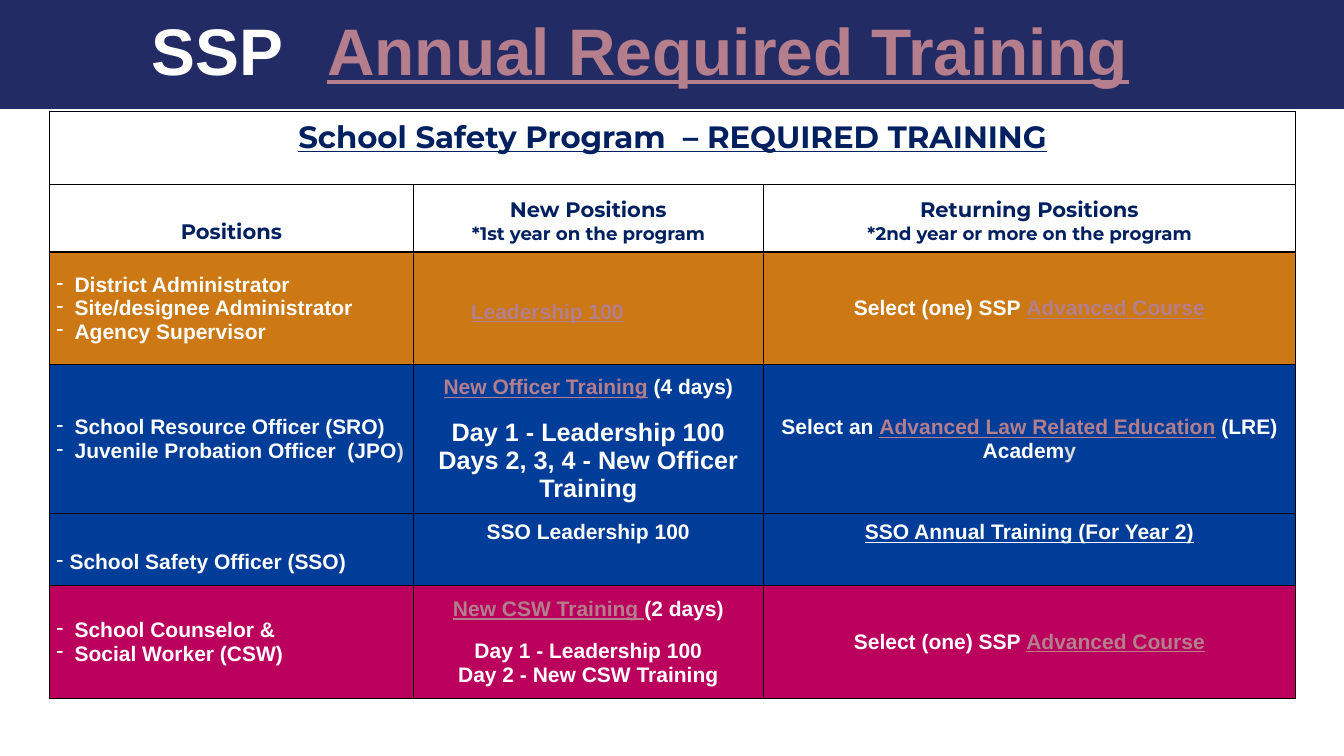
from dataclasses import dataclass

from lxml import etree
from pptx import Presentation
from pptx.dml.color import RGBColor
from pptx.enum import shapes, text
from pptx.oxml import ns
from pptx.util import Inches, Pt

WHITE = RGBColor(0xFF, 0xFF, 0xFF)
BANNER_NAVY = RGBColor(0x23, 0x2B, 0x64)
HEADING_NAVY = RGBColor(0x00, 0x20, 0x60)
LINK_ROSE = RGBColor(0xB4, 0x7E, 0x8C)
PALE_GREY = RGBColor(0xD9, 0xD9, 0xD9)
ORANGE = RGBColor(0xCB, 0x78, 0x15)
BLUE = RGBColor(0x00, 0x3D, 0x98)
MAGENTA = RGBColor(0xBA, 0x00, 0x5C)
BORDER_HEX = "000000"

LEFT, CENTER = text.PP_ALIGN.LEFT, text.PP_ALIGN.CENTER
TOP, MIDDLE, BOTTOM = text.MSO_ANCHOR.TOP, text.MSO_ANCHOR.MIDDLE, text.MSO_ANCHOR.BOTTOM
COLUMN_WIDTHS = (3.61, 3.47, 5.28)
TABLE_LEFT = 0.49
CELL_MARGIN = 0.07


@dataclass
class Run:
    words: str
    size: float = 15
    color: RGBColor = WHITE
    underline: bool = False
    font: str = "Arial"


@dataclass
class Line:
    runs: list
    align: int = CENTER
    before: float = 0
    hanging: float = 0


@dataclass
class Cell:
    lines: list
    anchor: int = MIDDLE
    left: float = CELL_MARGIN
    top: float = CELL_MARGIN


def link(words):
    return Run(words, color=LINK_ROSE, underline=True)


def heading(words, size=15, underline=False):
    return Line([Run(words, size, HEADING_NAVY, underline, "Montserrat")])


def dashed(*runs, hanging=0.18):
    return Line(list(runs), LEFT, hanging=hanging)


def add_run(paragraph, item):
    run = paragraph.add_run()
    run.text = item.words
    run.font.size = Pt(item.size)
    run.font.name = item.font
    run.font.bold = True
    run.font.underline = item.underline
    run.font.color.rgb = item.color


def add_dash(paragraph, hanging):
    properties = paragraph._p.get_or_add_pPr()
    properties.set("marL", str(Inches(hanging)))
    properties.set("indent", str(-Inches(hanging)))
    etree.SubElement(properties, ns.qn("a:buChar"), char="-")


def fill_lines(frame, lines):
    for index, line in enumerate(lines):
        paragraph = frame.add_paragraph() if index else frame.paragraphs[0]
        paragraph.alignment = line.align
        if line.before:
            paragraph.space_before = Pt(line.before)
        if line.hanging:
            add_dash(paragraph, line.hanging)
        for item in line.runs:
            add_run(paragraph, item)


def add_borders(cell):
    properties = cell._tc.get_or_add_tcPr()
    for side in ("lnL", "lnR", "lnT", "lnB"):
        border = etree.SubElement(properties, ns.qn(f"a:{side}"), w=str(Pt(1)))
        solid = etree.SubElement(border, ns.qn("a:solidFill"))
        etree.SubElement(solid, ns.qn("a:srgbClr"), val=BORDER_HEX)


def add_training_table(slide, top, row_heights, rows, color=None):
    table = slide.shapes.add_table(
        len(rows), len(COLUMN_WIDTHS), Inches(TABLE_LEFT), Inches(top),
        Inches(sum(COLUMN_WIDTHS)), Inches(sum(row_heights))).table
    table.first_row = table.horz_banding = False
    for column, width in zip(table.columns, COLUMN_WIDTHS):
        column.width = Inches(width)
    for row_index, (row, height) in enumerate(zip(rows, row_heights)):
        table.rows[row_index].height = Inches(height)
        for column_index in range(len(COLUMN_WIDTHS)):
            cell = table.cell(row_index, column_index)
            add_borders(cell)
            if color is None:
                cell.fill.background()
            else:
                cell.fill.solid()
                cell.fill.fore_color.rgb = color
        for column_index, content in enumerate(row):
            cell = table.cell(row_index, column_index)
            cell.margin_left, cell.margin_top = Inches(content.left), Inches(content.top)
            cell.margin_right = cell.margin_bottom = Inches(CELL_MARGIN)
            cell.vertical_anchor = content.anchor
            fill_lines(cell.text_frame, content.lines)
        if len(row) == 1:
            table.cell(row_index, 0).merge(table.cell(row_index, len(COLUMN_WIDTHS) - 1))


def add_title_text(slide, box, item, anchor, inset):
    frame = slide.shapes.add_textbox(*map(Inches, box)).text_frame
    frame.word_wrap = True
    frame.vertical_anchor = anchor
    frame.margin_top = frame.margin_bottom = Inches(inset)
    fill_lines(frame, [Line([item])])
    frame.paragraphs[0].line_spacing = 0.9


def add_banner(slide, width, height):
    banner = slide.shapes.add_shape(
        shapes.MSO_SHAPE.RECTANGLE, 0, 0, Inches(width), Inches(height))
    banner.shadow.inherit = False
    banner.fill.solid()
    banner.fill.fore_color.rgb = BANNER_NAVY
    banner.line.fill.background()
    add_title_text(slide, (0, 0.05, 4.48, height - 0.1), Run("SSP ", 47), MIDDLE, 0.05)
    add_title_text(slide, (2.98, 0.08, 8.48, 0.91),
                   Run("Annual Required Training", 47, LINK_ROSE, True), TOP, 0.1)


def add_training_tables(slide):
    advanced = Cell([Line([Run("Select (one) SSP "), link("Advanced Course")])])
    add_training_table(slide, 1.11, (0.72, 0.67), [
        [Cell([heading("School Safety Program  – REQUIRED TRAINING", 22, True)], TOP)],
        [Cell([heading("Positions")], BOTTOM),
         Cell([heading("New Positions"), heading("*1st year on the program", 13)], BOTTOM),
         Cell([heading("Returning Positions"),
               heading("*2nd year or more on the program", 13)], BOTTOM)],
    ])
    add_training_table(slide, 2.5, (1.12,), [
        [Cell([dashed(Run(position)) for position in (
            "District Administrator", "Site/designee Administrator", "Agency Supervisor")]),
         Cell([Line([link("Leadership 100")], LEFT)], left=0.57, top=0.14),
         advanced],
    ], ORANGE)
    add_training_table(slide, 3.62, (1.39, 0.8), [
        [Cell([dashed(Run("School Resource Officer (SRO)")),
               dashed(Run("Juvenile Probation Officer  (JPO"), Run(")", color=PALE_GREY))]),
         Cell([Line([link("New Officer Training"), Run(" (4 days)")]),
               Line([Run("Day 1 - Leadership 100", 18)], before=13.5),
               Line([Run("Days 2, 3, 4 - New Officer Training", 18)])]),
         Cell([Line([Run("Select an "), link("Advanced Law Related Education"),
                     Run(" (LRE) Academ"), Run("y", color=PALE_GREY)])])],
        [Cell([dashed(Run("School Safety Officer (SSO)"), hanging=0.13)], top=0.23),
         Cell([Line([Run("SSO Leadership 100")])], TOP),
         Cell([Line([Run("SSO Annual Training (For Year 2)", underline=True)])], TOP)],
    ], BLUE)
    add_training_table(slide, 5.81, (1.12,), [
        [Cell([dashed(Run("School Counselor &")), dashed(Run("Social Worker (CSW)"))]),
         Cell([Line([link("New CSW Training "), Run("(2 days)")]),
               Line([Run("Day 1 - Leadership 100")], before=13.5),
               Line([Run("Day 2 - New CSW Training")])]),
         advanced],
    ], MAGENTA)


def main():
    presentation = Presentation()
    presentation.slide_width, presentation.slide_height = Inches(13.33), Inches(7.5)
    slide = presentation.slides.add_slide(presentation.slide_layouts[6])
    add_banner(slide, 13.33, 1.08)
    add_training_tables(slide)
    presentation.save("out.pptx")


if __name__ == "__main__":
    main()
